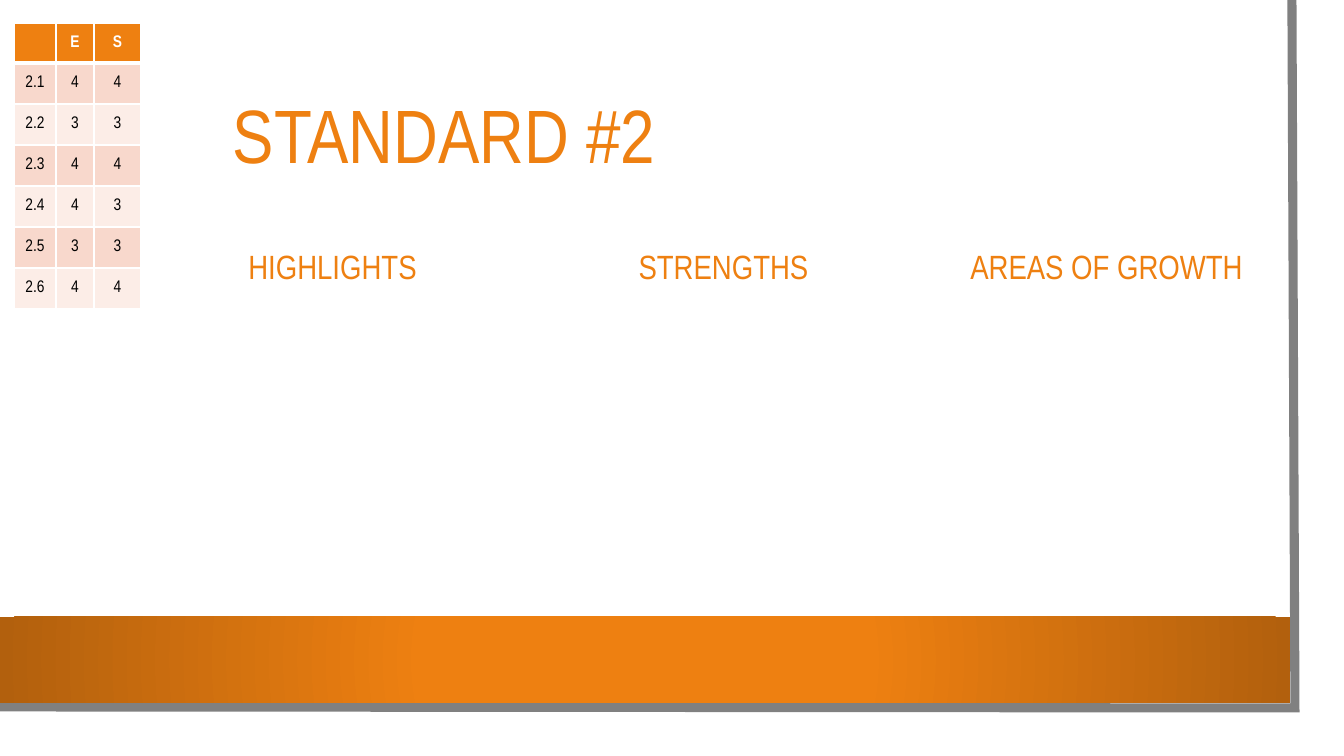
from lxml import etree
from pptx import Presentation
from pptx.dml.color import RGBColor
from pptx.enum.shapes import MSO_SHAPE as Preset
from pptx.enum.text import MSO_ANCHOR as Anchor, PP_ALIGN as Align
from pptx.oxml import parse_xml
from pptx.oxml.ns import nsdecls, qn
from pptx.util import Emu, Pt

EMU_PER_PX = 914400 / 100.8
FONT = "Arial Narrow"
COLORS = {
    "white": "FFFFFF", "black": "000000", "gray": "808080",
    "orange": "EE8011", "dark_orange": "B2600D",
    "band_odd": "F8D8CC", "band_even": "FCEDE7",
}
HEADINGS = [("HIGHLIGHTS", 142), ("STRENGTHS", 533), ("AREAS OF GROWTH", 916)]
RATINGS = [
    ("", "E", "S"),
    ("2.1", "4", "4"),
    ("2.2", "3", "3"),
    ("2.3", "4", "4"),
    ("2.4", "4", "3"),
    ("2.5", "3", "3"),
    ("2.6", "4", "4"),
]
COLUMN_WIDTHS = (42, 38, 47)
HEADER_HEIGHT, ROW_HEIGHT = 40, 41


def px(length):
    return Emu(round(length * EMU_PER_PX))


def box(*lengths):
    return [px(length) for length in lengths]


def rgb(name):
    return RGBColor.from_string(COLORS[name])


def style_font(paragraph, size, color, bold=False):
    font = paragraph.font
    font.name, font.size, font.bold = FONT, Pt(size), bold
    font.color.rgb = rgb(color)


def add_rectangle(slide, *bounds):
    rectangle = slide.shapes.add_shape(Preset.RECTANGLE, *box(*bounds))
    rectangle.shadow.inherit = False
    rectangle.line.fill.background()
    rectangle.fill.solid()
    rectangle.fill.fore_color.rgb = rgb("white")
    return rectangle


def fill_radial(shape, inner, outer, inner_stop):
    """Fade from the centre colour, held up to inner_stop percent, to the outer one."""
    gradient = parse_xml(
        f'<a:gradFill {nsdecls("a")} rotWithShape="1"><a:gsLst>'
        f'<a:gs pos="{inner_stop * 1000}"><a:srgbClr val="{COLORS[inner]}"/></a:gs>'
        f'<a:gs pos="100000"><a:srgbClr val="{COLORS[outer]}"/></a:gs></a:gsLst>'
        '<a:path path="circle"><a:fillToRect l="50000" t="50000" r="50000" b="50000"/>'
        '</a:path></a:gradFill>')
    properties = shape.element.spPr
    properties.replace(properties.find(qn("a:solidFill")), gradient)


def add_page_edge(slide):
    builder = slide.shapes.build_freeform(1292, 0, scale=EMU_PER_PX)
    builder.add_line_segments([(1295, 708), (-3, 707)], close=False)
    edge = builder.convert_to_shape()
    edge.shadow.inherit = False
    edge.fill.background()
    edge.line.color.rgb = rgb("gray")
    edge.line.width = Pt(6.5)
    miter = etree.SubElement(edge.element.spPr.find(qn("a:ln")), qn("a:miter"))
    miter.set("lim", "800000")


def add_caption(slide, text, bounds, size, anchor, tab_stop=None):
    frame = slide.shapes.add_textbox(*box(*bounds)).text_frame
    frame.word_wrap = True
    frame.vertical_anchor = anchor
    paragraph = frame.paragraphs[0]
    paragraph.text = text
    paragraph.alignment = Align.CENTER
    paragraph.line_spacing = 0.9
    if tab_stop:
        tabs = etree.SubElement(paragraph._p.get_or_add_pPr(), qn("a:tabLst"))
        etree.SubElement(tabs, qn("a:tab"), pos=str(px(tab_stop)), algn="r")
    style_font(paragraph, size, "orange")


def add_borders(cell, bottom_width):
    properties = cell._tc.get_or_add_tcPr()
    for side, width in zip("LRTB", (1, 1, 1, bottom_width)):
        properties.append(parse_xml(
            f'<a:ln{side} {nsdecls("a")} w="{Pt(width)}"><a:solidFill>'
            f'<a:srgbClr val="{COLORS["white"]}"/></a:solidFill></a:ln{side}>'))


def fill_cell(cell, text, is_header, band):
    add_borders(cell, 3 if is_header else 1)
    cell.fill.solid()
    cell.fill.fore_color.rgb = rgb(band)
    cell.vertical_anchor = Anchor.MIDDLE
    paragraph = cell.text_frame.paragraphs[0]
    paragraph.text = text
    paragraph.alignment = Align.CENTER
    style_font(paragraph, 12, "white" if is_header else "black", is_header)


def add_ratings(slide, left, top):
    heights = [HEADER_HEIGHT] + [ROW_HEIGHT] * (len(RATINGS) - 1)
    table = slide.shapes.add_table(
        len(RATINGS), len(COLUMN_WIDTHS),
        *box(left, top, sum(COLUMN_WIDTHS), sum(heights))).table
    for column, width in zip(table.columns, COLUMN_WIDTHS):
        column.width = px(width)
    for index, (row, height, ratings) in enumerate(zip(table.rows, heights, RATINGS)):
        row.height = px(height)
        is_header = index == 0
        band = "orange" if is_header else "band_odd" if index % 2 else "band_even"
        for cell, rating in zip(row.cells, ratings):
            fill_cell(cell, rating, is_header, band)


def main():
    deck = Presentation()
    deck.slide_width, deck.slide_height = box(1344, 756)
    slide = deck.slides.add_slide(deck.slide_layouts[6])

    add_rectangle(slide, 0, 0, 1320, 733)
    add_page_edge(slide)
    footer_band = add_rectangle(slide, 0, 617, 1290, 86)
    fill_radial(footer_band, "orange", "dark_orange", 34)

    add_caption(slide, "STANDARD #2\t", (76, 76, 1146, 127), 54, Anchor.MIDDLE, tab_stop=832)
    for heading, left in HEADINGS:
        add_caption(slide, heading, (left, 228, 381, 64), 24, Anchor.BOTTOM)
    add_ratings(slide, 14, 23)

    deck.save("out.pptx")


if __name__ == "__main__":
    main()
